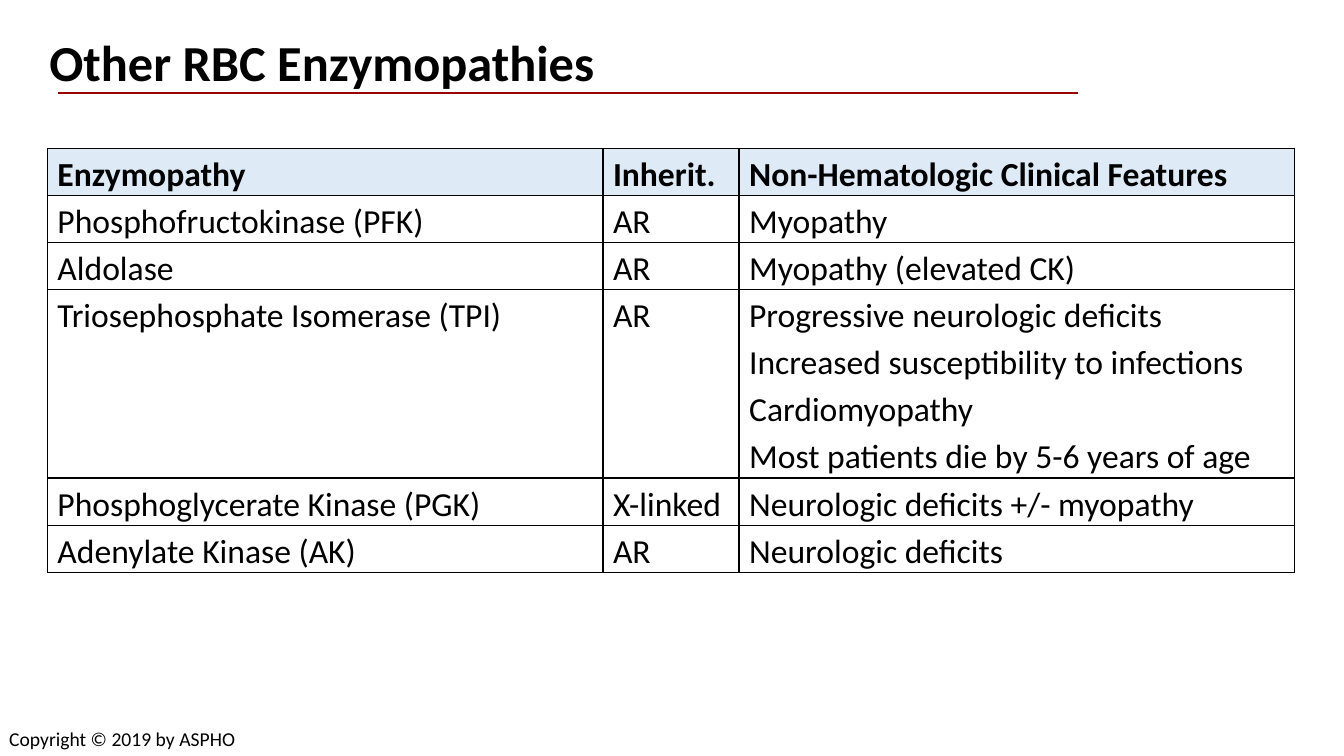
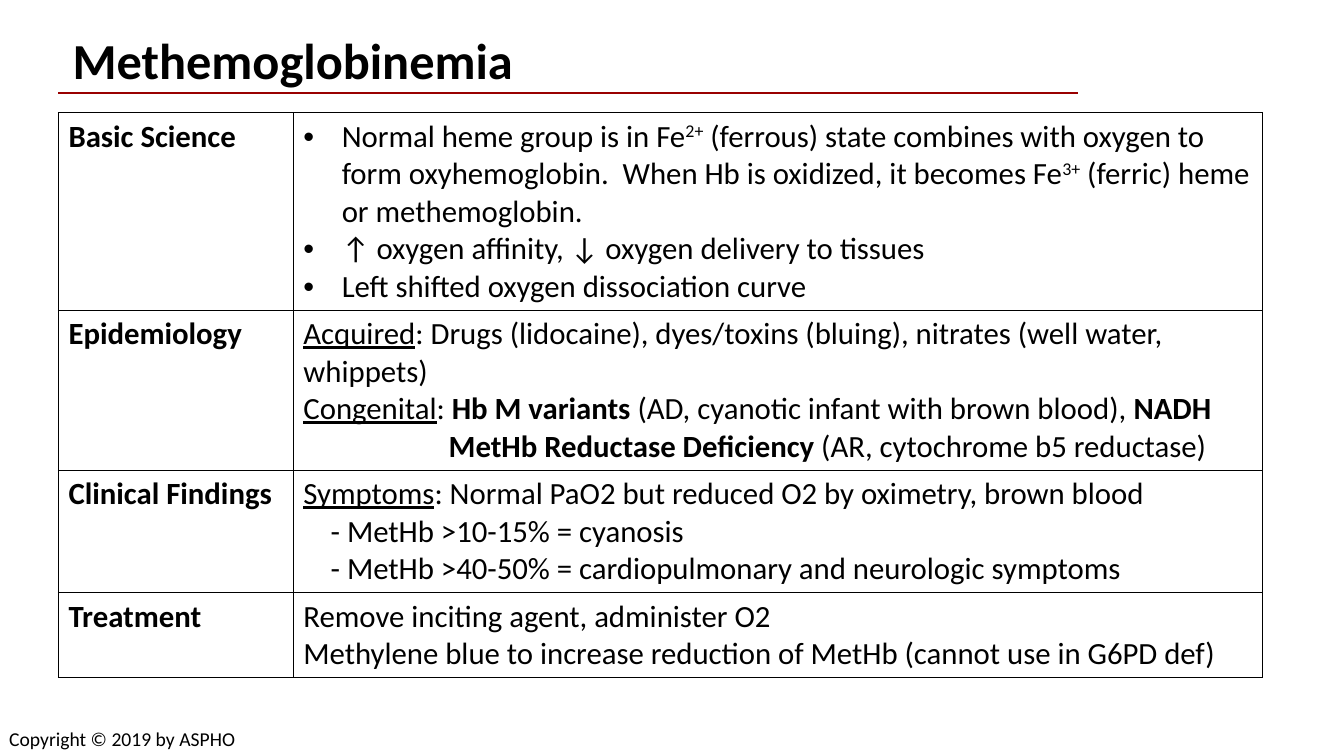
import pptx
import pptx.dml.color
import pptx.enum.shapes
import pptx.enum.text
import pptx.oxml
import pptx.oxml.ns
import pptx.util

Inches = pptx.util.Inches
Pt = pptx.util.Pt

FONT = "Calibri"
BLACK, WHITE, RED, PALE = "000000", "FFFFFF", "990000", "DEEBF7"
NS = pptx.oxml.ns.nsdecls("a")

# Left indent and first-line indent of a paragraph
FLAT, DASH, UNDER, BULLET = (0, 0), (0.27, 0), (1.44, 0), (0.38, -0.38)

# Run formats
PLAIN, BOLD, LINED, RAISED = {}, {"bold": True}, {"lined": True}, {"base": 30}


def hue(code):
    """Turn a hex string into a colour."""
    return pptx.dml.color.RGBColor.from_string(code)


def write(para, text, size=24, bold=False, lined=False, base=0):
    """Add a run to a paragraph; base raises it, in percent."""
    run = para.add_run()
    run.text = text
    font = run.font
    font.name, font.size, font.bold, font.underline = FONT, Pt(size), bold, lined
    font.color.rgb = hue(BLACK)
    if base:
        run._r.get_or_add_rPr().set("baseline", str(base * 1000))


# Each cell is a list of paragraphs: indents, then runs
enzymes = [
    ["Enzymopathy", "Inherit.", "Non-Hematologic Clinical Features"],
    ["Phosphofructokinase (PFK)", "AR", "Myopathy"],
    ["Aldolase", "AR", "Myopathy (elevated CK)"],
    ["Triosephosphate Isomerase (TPI)", "AR",
     "Progressive neurologic deficits\nIncreased susceptibility to infections\n"
     "Cardiomyopathy\nMost patients die by 5-6 years of age"],
    ["Phosphoglycerate Kinase (PGK)", "X-linked", "Neurologic deficits +/- myopathy"],
    ["Adenylate Kinase (AK)", "AR", "Neurologic deficits"],
]
enzymes = [[[(FLAT, [(line, PLAIN if row else BOLD)]) for line in text.split("\n")]
            for text in texts] for row, texts in enumerate(enzymes)]

topics = [
    ("Basic Science", [
        (BULLET, [("Normal heme group is in Fe", PLAIN), ("2+", RAISED),
                  (" (ferrous) state combines with oxygen to form oxyhemoglobin.  "
                   "When Hb is oxidized, it becomes Fe", PLAIN), ("3+", RAISED),
                  (" (ferric) heme or methemoglobin.", PLAIN)]),
        (BULLET, [("↑ oxygen affinity, ↓ oxygen delivery to tissues", PLAIN)]),
        (BULLET, [("Left shifted oxygen dissociation curve", PLAIN)]),
    ]),
    ("Epidemiology", [
        (FLAT, [("Acquired", LINED),
                (": Drugs (lidocaine), dyes/toxins (bluing), nitrates "
                 "(well water, whippets)", PLAIN)]),
        (FLAT, [("Congenital", LINED), (": ", PLAIN), ("Hb M variants ", BOLD),
                ("(AD, cyanotic infant with brown blood), ", PLAIN), ("NADH", BOLD)]),
        (UNDER, [("MetHb Reductase Deficiency", BOLD),
                 (" (AR, cytochrome b5 reductase)", PLAIN)]),
    ]),
    ("Clinical Findings", [
        (FLAT, [("Symptoms", LINED),
                (": Normal PaO2 but reduced O2 by oximetry, brown blood", PLAIN)]),
        (DASH, [("- MetHb >10-15% = cyanosis", PLAIN)]),
        (DASH, [("- MetHb >40-50% = cardiopulmonary and neurologic symptoms", PLAIN)]),
    ]),
    ("Treatment", [
        (FLAT, [("Remove inciting agent, administer O2", PLAIN)]),
        (FLAT, [("Methylene blue to increase reduction of MetHb "
                 "(cannot use in G6PD def)", PLAIN)]),
    ]),
]
topics = [[[(FLAT, [(topic, BOLD)])], facts] for topic, facts in topics]

pages = [
    {"title": "Other RBC Enzymopathies", "spot": (0.39, 0.31), "rows": enzymes,
     "at": (0.47, 1.47), "cols": [5.51, 1.35, 5.51], "size": 24, "space": 1.15,
     "pad": 0, "line": 0.46, "head": PALE},
    {"title": "Methemoglobinemia", "spot": (0.62, 0.29), "rows": topics,
     "at": (0.58, 1.12), "cols": [2.33, 9.61], "size": 22, "space": 1,
     "pad": 0.05, "line": 0.37, "head": WHITE},
]

deck = pptx.Presentation()
deck.slide_width, deck.slide_height = Inches(13.33), Inches(7.5)

for page in pages:
    slide = deck.slides.add_slide(deck.slide_layouts[5])

    title = slide.shapes.title
    title.left, title.top = [Inches(n) for n in page["spot"]]
    title.width, title.height = Inches(12), Inches(0.68)
    title.text_frame.vertical_anchor = pptx.enum.text.MSO_ANCHOR.MIDDLE
    para = title.text_frame.paragraphs[0]
    para.alignment = pptx.enum.text.PP_ALIGN.LEFT
    para.line_spacing = 0.9
    write(para, page["title"], size=36, bold=True)

    rule = slide.shapes.add_connector(
        pptx.enum.shapes.MSO_CONNECTOR.STRAIGHT,
        Inches(0.58), Inches(0.92), Inches(10.69), Inches(0.92))
    rule.line.color.rgb = hue(RED)
    rule.line.width = Pt(1.5)
    rule._element.spPr.append(pptx.oxml.parse_xml(f"<a:effectLst {NS}/>"))

    rows, cols = page["rows"], page["cols"]
    highs = [max(map(len, cells)) * page["line"] + 2 * page["pad"] for cells in rows]
    left, top = page["at"]
    table = slide.shapes.add_table(
        len(rows), len(cols), Inches(left), Inches(top),
        Inches(sum(cols)), Inches(sum(highs))).table
    table.first_row = table.horz_banding = False
    for col, wide in zip(table.columns, cols):
        col.width = Inches(wide)

    for r, cells in enumerate(rows):
        table.rows[r].height = Inches(highs[r])
        for c, paras in enumerate(cells):
            cell = table.cell(r, c)
            cell.margin_left = cell.margin_right = Inches(0.1)
            cell.margin_top = cell.margin_bottom = Inches(page["pad"])
            for side in "LRTB":
                cell._tc.get_or_add_tcPr().append(pptx.oxml.parse_xml(
                    f'<a:ln{side} {NS} w="12700"><a:solidFill>'
                    f'<a:srgbClr val="{BLACK}"/></a:solidFill></a:ln{side}>'))
            cell.fill.solid()
            cell.fill.fore_color.rgb = hue(WHITE if r else page["head"])

            frame = cell.text_frame
            for n, (dent, runs) in enumerate(paras):
                para = frame.add_paragraph() if n else frame.paragraphs[0]
                props = para._p.get_or_add_pPr()
                props.set("marL", str(Inches(dent[0])))
                props.set("indent", str(Inches(dent[1])))
                if dent == BULLET:
                    props.append(pptx.oxml.parse_xml(f'<a:buFont {NS} typeface="Arial"/>'))
                    props.append(pptx.oxml.parse_xml(f'<a:buChar {NS} char="•"/>'))
                para.line_spacing = float(page["space"])
                for text, style in runs:
                    write(para, text, size=page["size"], **style)

    foot = slide.shapes.add_textbox(Inches(0), Inches(7.16), Inches(2.48), Inches(0.34))
    foot.text_frame.word_wrap = True
    foot.text_frame.margin_left = Inches(0.09)
    write(foot.text_frame.paragraphs[0], "Copyright © 2019 by ASPHO", size=14)

deck.save("out.pptx")
